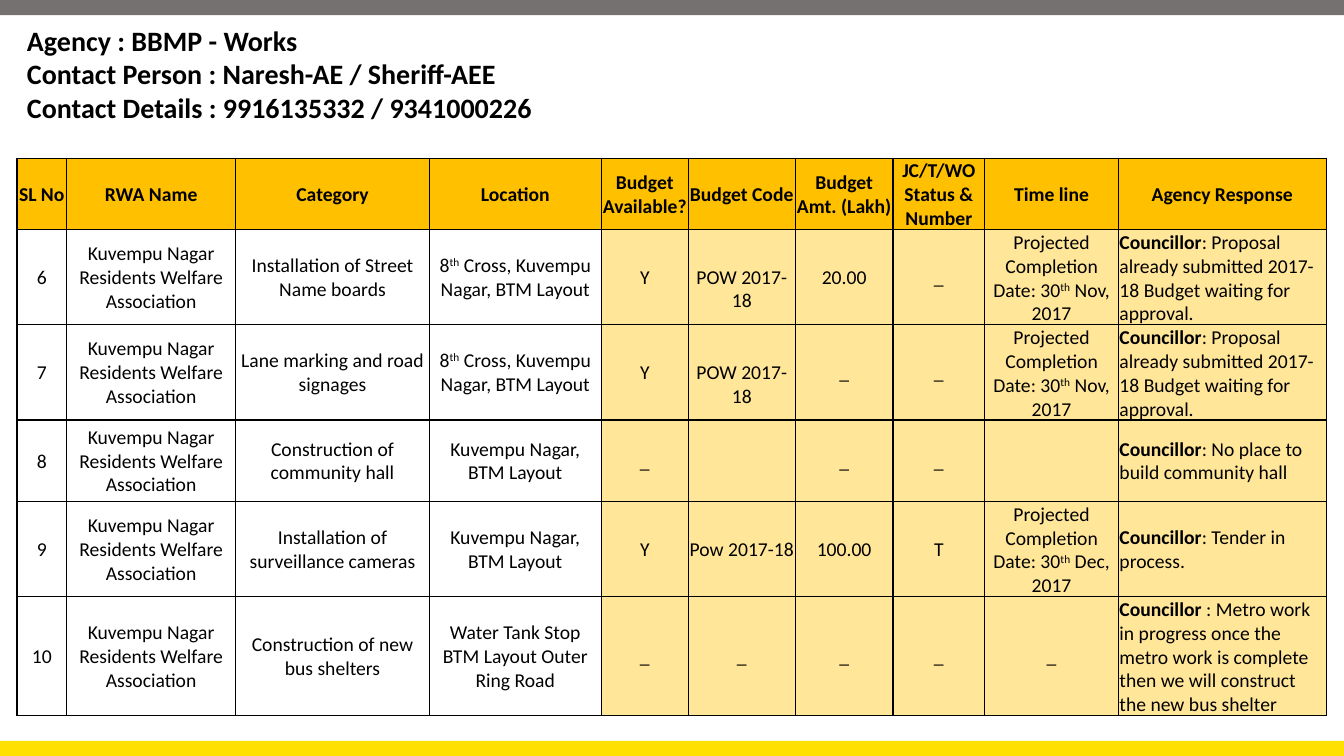
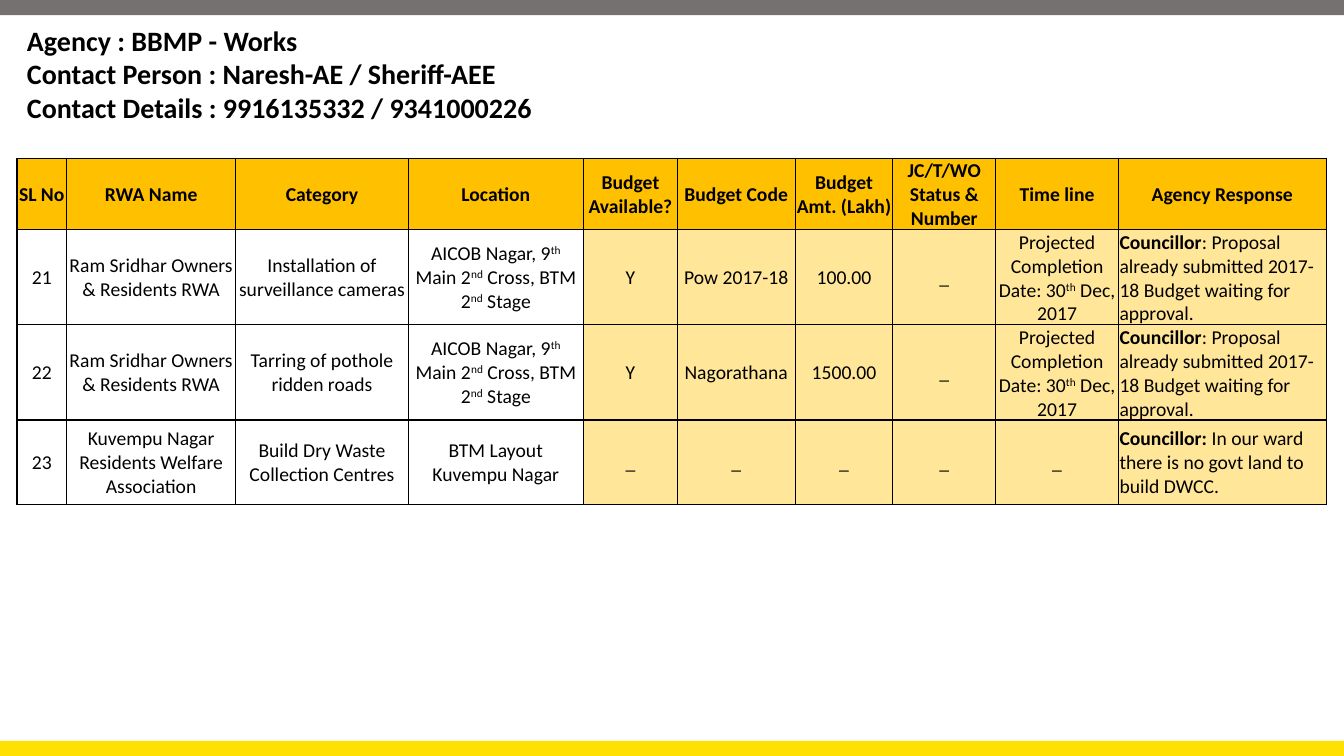
"""Build the agency status slides: heading, bands and a work table."""
from lxml import etree
from pptx import Presentation
from pptx.dml.color import RGBColor
from pptx.enum.shapes import MSO_SHAPE
from pptx.enum.text import MSO_ANCHOR, PP_ALIGN
from pptx.oxml.ns import qn
from pptx.util import Pt

RECT = MSO_SHAPE.RECTANGLE
MIDDLE = MSO_ANCHOR.MIDDLE
LEFT, CENTER = PP_ALIGN.LEFT, PP_ALIGN.CENTER

COLORS = {
    "gray": "767171",
    "yellow": "FFE000",
    "head": "FFC000",
    "agency": "FFE699",
    "plain": "FFFFFF",
    "ink": "000000",
}
FONT = "Calibri"
WIDE, HIGH, BAND = 960, 540, 10.8
TITLE_BOX = (12.2, 13, 935.2, 80)
TABLE_BOX = (12.2, 113, 935.2)
SHADED = 4
LINE = 17

TITLE = [
    "Agency : BBMP - Works",
    "Contact Person : Naresh-AE / Sheriff-AEE",
    "Contact Details : 9916135332 / 9341000226",
]
HEADS = [
    "SL No", "RWA Name", "Category", "Location", "Budget Available?",
    "Budget Code", "Budget Amt. (Lakh)", "JC/T/WO Status & Number",
    "Time line", "Agency Response",
]
KUVEMPU = "Kuvempu Nagar Residents Welfare Association"
SRIDHAR = "Ram Sridhar Owners & Residents RWA"
CROSS = "8^th^ Cross, Kuvempu Nagar, BTM Layout"
LAYOUT = "Kuvempu Nagar, BTM Layout"
AICOB = "AICOB Nagar, 9^th^ Main 2^nd^ Cross, BTM 2^nd^ Stage"
CAMERAS = "Installation of surveillance cameras"
NOV = "Projected Completion Date: 30^th^ Nov, 2017"
DEC = "Projected Completion Date: 30^th^ Dec, 2017"
WAITING = ("*Councillor*: Proposal already submitted 2017-18 Budget "
           "waiting for approval.")
LOWERED = "POW 2017-18"

PAGES = [
    {
        "cols": [35.3, 121, 138.2, 122.9, 62.1, 76.5, 69.8, 65.5, 95.6, 148.3],
        "heights": [51, 67.8, 67.8, 58.3, 67.8, 84.8],
        "rows": [
            ["6", KUVEMPU, "Installation of Street Name boards", CROSS,
             "Y", LOWERED, "20.00", "_", NOV, WAITING],
            ["7", KUVEMPU, "Lane marking and road signages", CROSS,
             "Y", LOWERED, "_", "_", NOV, WAITING],
            ["8", KUVEMPU, "Construction of community hall", LAYOUT,
             "_", "", "_", "_", "",
             "*Councillor*: No place to build community hall"],
            ["9", KUVEMPU, CAMERAS, LAYOUT,
             "Y", "Pow 2017-18", "100.00", "T", DEC,
             "*Councillor*: Tender in process."],
            ["10", KUVEMPU, "Construction of new bus shelters",
             "Water Tank Stop BTM Layout Outer Ring Road",
             "_", "_", "_", "_", "_",
             "*Councillor* : Metro work in progress once the metro work is "
             "complete then we will construct the new bus shelter"],
        ],
    },
    {
        "cols": [35.3, 121, 123.1, 125.3, 67, 84.2, 69.8, 73.4, 87.8, 148.3],
        "heights": [51, 67.8, 67.8, 60.5],
        "rows": [
            ["21", SRIDHAR, CAMERAS, AICOB,
             "Y", "Pow 2017-18", "100.00", "_", DEC, WAITING],
            ["22", SRIDHAR, "Tarring of pothole ridden roads", AICOB,
             "Y", "Nagorathana", "1500.00", "_", DEC, WAITING],
            ["23", KUVEMPU, "Build Dry Waste Collection Centres",
             "BTM Layout Kuvempu Nagar", "_", "_", "_", "_", "_",
             "*Councillor:* In our ward there is no govt land to build DWCC."],
        ],
    },
]


def color(name):
    """Return the named colour."""
    return RGBColor.from_string(COLORS[name])


def style(font, size, bold):
    """Give a font the shared face and ink."""
    font.name, font.size, font.bold = FONT, Pt(size), bold
    font.color.rgb = color("ink")


def add_band(slide, top, name):
    """Draw a band across the slide."""
    band = slide.shapes.add_shape(RECT, 0, Pt(top), Pt(WIDE), Pt(BAND))
    band.shadow.inherit = False
    band.fill.solid()
    band.fill.fore_color.rgb = color(name)
    band.line.fill.background()


def add_title(slide, box):
    """Write the agency heading in its box."""
    frame = slide.shapes.add_textbox(*map(Pt, box)).text_frame
    frame.word_wrap = True
    frame.text = "\n".join(TITLE)
    for para in frame.paragraphs:
        style(para.runs[0].font, 20, True)


def add_rich(para, text, bold):
    """Write text where * marks bold and ^ marks superscript."""
    for i, part in enumerate(text.split("*")):
        for j, piece in enumerate(part.split("^")):
            if piece:
                run = para.add_run()
                run.text = piece
                style(run.font, 14, bold or i % 2 == 1)
                if j % 2:
                    run._r.get_or_add_rPr().set("baseline", "30000")


def add_edges(cell):
    """Rule all four sides of a cell."""
    props = cell._tc.get_or_add_tcPr()
    for side in ("lnL", "lnR", "lnT", "lnB"):
        edge = etree.SubElement(props, qn("a:" + side), w=str(Pt(1)))
        fill = etree.SubElement(edge, qn("a:solidFill"))
        etree.SubElement(fill, qn("a:srgbClr"), val=COLORS["ink"])


def fill_cell(cell, text, name, align, bold):
    """Format one cell and write its text."""
    add_edges(cell)
    cell.fill.solid()
    cell.fill.fore_color.rgb = color(name)
    cell.vertical_anchor = MIDDLE
    cell.margin_left = cell.margin_right = Pt(0.7)
    cell.margin_top = Pt(LINE if text == LOWERED else 0.7)
    cell.margin_bottom = 0
    para = cell.text_frame.paragraphs[0]
    para.alignment = align
    add_rich(para, text, bold)


def add_grid(slide, box, page):
    """Place the work table in its box."""
    left, top, width = box
    rows = [HEADS] + page["rows"]
    size = (left, top, width, sum(page["heights"]))
    table = slide.shapes.add_table(
        len(rows), len(HEADS), *map(Pt, size)).table
    table.first_row = table.horz_banding = False
    for col, wide in zip(table.columns, page["cols"]):
        col.width = Pt(wide)
    for r, (row, high) in enumerate(zip(rows, page["heights"])):
        table.rows[r].height = Pt(high)
        for c, text in enumerate(row):
            head = r == 0
            name = "head" if head else "agency" if c >= SHADED else "plain"
            last = c == len(HEADS) - 1
            align = LEFT if last and not head else CENTER
            fill_cell(table.cell(r, c), text, name, align, head)


def add_page(deck, page):
    """Add one status slide."""
    slide = deck.slides.add_slide(deck.slide_layouts[6])
    add_band(slide, HIGH - BAND, "yellow")
    add_band(slide, 0, "gray")
    add_title(slide, TITLE_BOX)
    add_grid(slide, TABLE_BOX, page)


def main():
    """Build and save the deck."""
    deck = Presentation()
    deck.slide_width, deck.slide_height = Pt(WIDE), Pt(HIGH)
    for page in PAGES:
        add_page(deck, page)
    deck.save("out.pptx")


if __name__ == "__main__":
    main()
